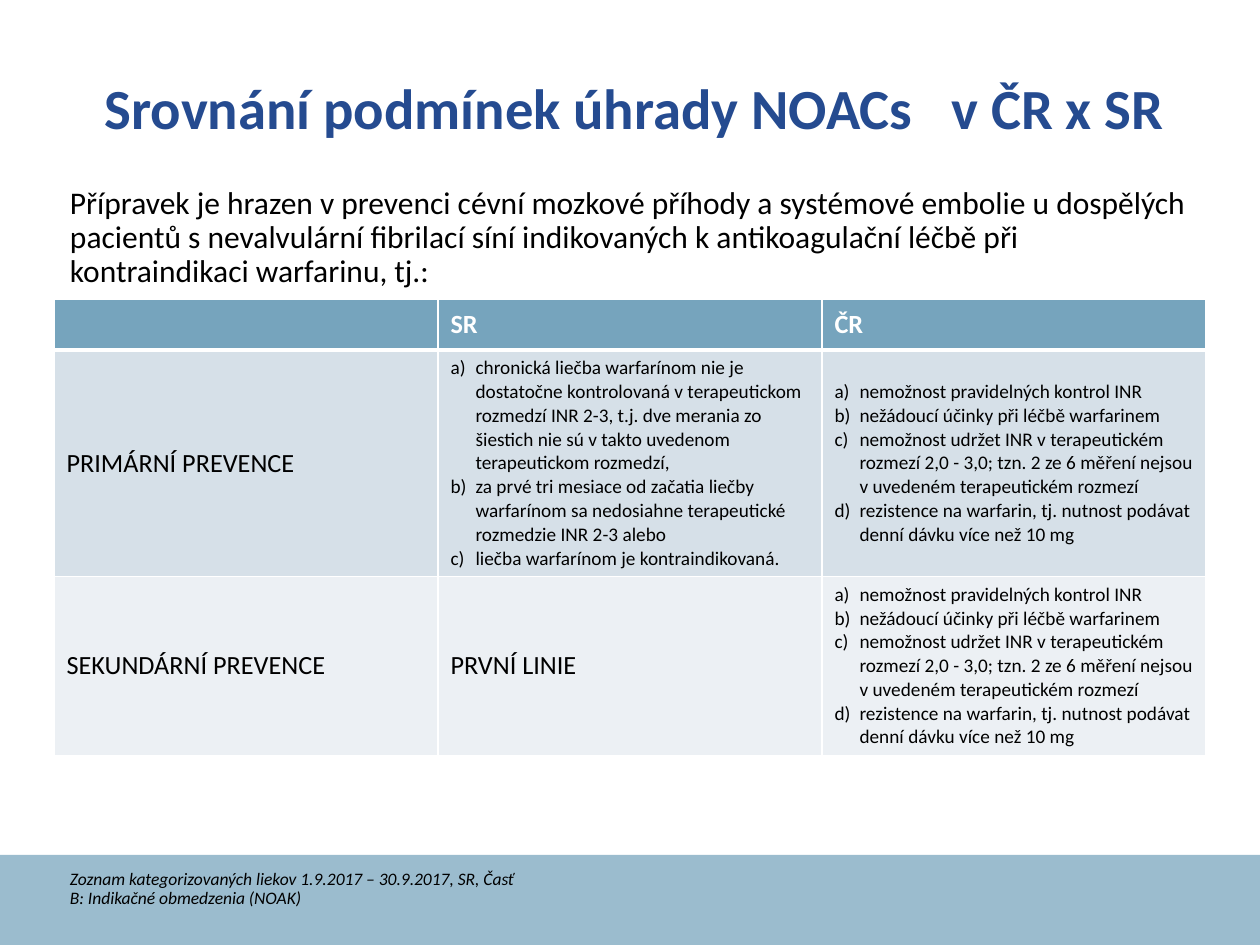
import lxml.etree
import pptx
import pptx.dml.color
import pptx.enum.shapes
import pptx.enum.text
import pptx.oxml.ns
import pptx.util

PIXEL = 914400 / 126
COLORS = {
    "header": "76A4BD",
    "primary": "D6E0E8",
    "secondary": "ECF0F4",
    "title": "254B90",
    "text": "000000",
    "white": "FFFFFF",
}
qn = pptx.oxml.ns.qn
middle = pptx.enum.text.MSO_ANCHOR.MIDDLE


def px(count):
    """Turn whole pixels into EMU."""
    return pptx.util.Emu(round(count * PIXEL))


def add_text(paragraph, text, size, color="text", bold=False, italic=False):
    run = paragraph.add_run()
    run.text = text
    run.font.name = "Calibri"
    run.font.size = pptx.util.Pt(size)
    run.font.bold = bold
    run.font.italic = italic
    run.font.color.rgb = pptx.dml.color.RGBColor.from_string(COLORS[color])
    return run


presentation = pptx.Presentation()
presentation.slide_width = px(1260)
presentation.slide_height = px(945)
slide = presentation.slides.add_slide(presentation.slide_layouts[6])

# Footer band
band = slide.shapes.add_shape(
    pptx.enum.shapes.MSO_SHAPE.RECTANGLE, px(0), px(855), px(1260), px(90))
band.shadow.inherit = False
band.line.fill.background()
band.fill.solid()
band.fill.fore_color.rgb = pptx.dml.color.RGBColor.from_string(COLORS["header"])
band_color = band._element.spPr.find(qn("a:solidFill")).find(qn("a:srgbClr"))
lxml.etree.SubElement(band_color, qn("a:alpha"), val="73000")

# Comparison table
monitoring_criteria = [
    "nemožnost pravidelných kontrol INR",
    "nežádoucí účinky při léčbě warfarinem",
    "nemožnost udržet INR v terapeutickém rozmezí 2,0 - 3,0; tzn. 2 ze 6 měření "
    "nejsou v uvedeném terapeutickém rozmezí",
    "rezistence na warfarin, tj. nutnost podávat denní dávku více než 10 mg",
]
warfarin_conditions = [
    "chronická liečba warfarínom nie je dostatočne kontrolovaná v terapeutickom "
    "rozmedzí INR 2-3, t.j. dve merania zo šiestich nie sú v takto uvedenom "
    "terapeutickom rozmedzí,",
    "za prvé tri mesiace od začatia liečby warfarínom sa nedosiahne terapeutické "
    "rozmedzie INR 2-3 alebo",
    "liečba warfarínom je kontraindikovaná.",
]
# Height, fill and cells of each row; a list in a cell is lettered a), b), c)
rows = [
    (51, "header", ["", "SR", "ČR"]),
    (226, "primary", ["PRIMÁRNÍ PREVENCE", warfarin_conditions, monitoring_criteria]),
    (179, "secondary", ["SEKUNDÁRNÍ PREVENCE", "PRVNÍ LINIE", monitoring_criteria]),
]
table = slide.shapes.add_table(3, 3, px(54), px(299), px(1152), px(456)).table
table.first_row = False
table.horz_banding = False
for column in table.columns:
    column.width = px(384)

for row_index, (height, fill, contents) in enumerate(rows):
    table.rows[row_index].height = px(height)
    is_header = row_index == 0
    for column_index, content in enumerate(contents):
        cell = table.cell(row_index, column_index)
        cell.vertical_anchor = middle
        properties = cell._tc.get_or_add_tcPr()
        for side in ("lnL", "lnR", "lnT", "lnB"):
            thick = (is_header and side == "lnB") or (row_index == 1 and side == "lnT")
            border = lxml.etree.SubElement(
                properties, qn("a:" + side), w=str(pptx.util.Pt(3 if thick else 1)))
            border_fill = lxml.etree.SubElement(border, qn("a:solidFill"))
            lxml.etree.SubElement(border_fill, qn("a:srgbClr"), val=COLORS["white"])
        cell.fill.solid()
        cell.fill.fore_color.rgb = pptx.dml.color.RGBColor.from_string(COLORS[fill])

        frame = cell.text_frame
        if isinstance(content, list):
            for item_index, item in enumerate(content):
                paragraph = frame.add_paragraph() if item_index else frame.paragraphs[0]
                layout = paragraph._p.get_or_add_pPr()
                layout.set("marL", str(px(25)))
                layout.set("indent", str(-px(25)))
                lxml.etree.SubElement(layout, qn("a:buFont"), typeface="Calibri")
                lxml.etree.SubElement(layout, qn("a:buAutoNum"), type="alphaLcParenR")
                add_text(paragraph, item, 11)
        elif content:
            add_text(frame.paragraphs[0], content, 15,
                     "white" if is_header else "text", bold=is_header)

# Title, introduction and source note
paragraphs = []
for left, top, width, height in [
    (63, 69, 1142, 84),
    (63, 183, 1142, 112),
    (63, 866, 466, 69),
]:
    frame = slide.shapes.add_textbox(px(left), px(top), px(width), px(height)).text_frame
    frame.word_wrap = True
    frame.margin_left = frame.margin_right = px(7)
    frame.margin_top = frame.margin_bottom = px(4)
    frame.paragraphs[0].line_spacing = 0.9
    paragraphs.append(frame.paragraphs[0])

title, introduction, source_note = paragraphs
title.alignment = pptx.enum.text.PP_ALIGN.CENTER
title._parent.vertical_anchor = middle
add_text(title, "Srovnání podmínek úhrady NOACs", 32.4, "title", bold=True)
wide_space = add_text(title, " ", 32.4, "title", bold=True)
wide_space._r.get_or_add_rPr().set("spc", "1460")
add_text(title, "v ČR x SR", 32.4, "title", bold=True)
add_text(
    introduction,
    "Přípravek je hrazen v prevenci cévní mozkové příhody a systémové embolie u "
    "dospělých pacientů s nevalvulární fibrilací síní indikovaných k antikoagulační "
    "léčbě při kontraindikaci warfarinu, tj.:", 18)
add_text(
    source_note,
    "Zoznam kategorizovaných liekov 1.9.2017 – 30.9.2017, SR, Časť B: Indikačné "
    "obmedzenia (NOAK)", 10, italic=True)

presentation.save("out.pptx")
